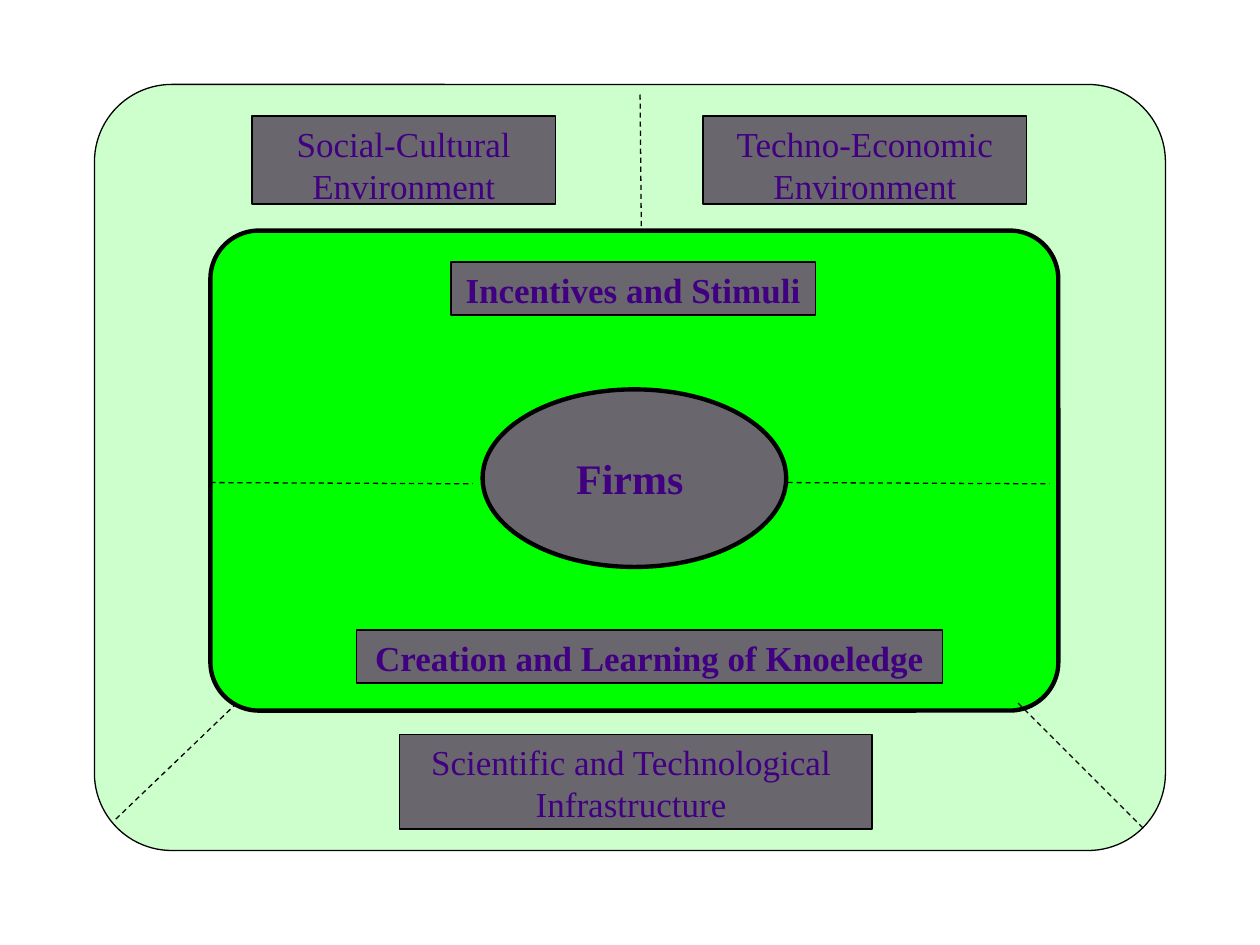
import pptx
import pptx.util
import pptx.dml.color
import pptx.enum.dml
import pptx.enum.shapes
import pptx.enum.text
import pptx.oxml
from dataclasses import dataclass

Inches, Pt = pptx.util.Inches, pptx.util.Pt
RGB = pptx.dml.color.RGBColor.from_string
SHAPE = pptx.enum.shapes.MSO_SHAPE
ANCHOR = pptx.enum.text.MSO_ANCHOR


@dataclass(frozen=True)
class Theme:
    font: str = "Times New Roman"
    outer: str = "CCFFCC"
    inner: str = "00FF00"
    box: str = "69676D"
    line: str = "000000"
    text: str = "410082"
    label_size: int = 20
    core_size: int = 24
    leading: int = 24
    thin: float = 0.75
    thick: float = 2.5
    corner: float = 0.101
    inset_x: float = 0.1
    inset_y: float = 0.05


class Diagram:
    def __init__(self, slide, theme):
        self.s, self.t = slide, theme

    def shape(self, kind, at, fill, weight):
        sp = self.s.shapes.add_shape(kind, *map(Inches, at))
        sp.shadow.inherit = False
        sp.fill.solid()
        sp.fill.fore_color.rgb = RGB(fill)
        sp.line.color.rgb = RGB(self.t.line)
        sp.line.width = Pt(weight)
        return sp

    def panel(self, at, fill, weight):
        sp = self.shape(SHAPE.ROUNDED_RECTANGLE, at, fill, weight)
        sp.adjustments[0] = self.t.corner

    def caption(self, sp, text, size, bold, anchor, shift=(0, 0)):
        """Centre the text; shift widens the right and top insets."""
        tf = sp.text_frame
        tf.word_wrap = True
        tf.vertical_anchor = anchor
        tf.margin_left = Inches(self.t.inset_x)
        tf.margin_right = Inches(self.t.inset_x + shift[0])
        tf.margin_top = Inches(self.t.inset_y + shift[1])
        tf.margin_bottom = Inches(self.t.inset_y)
        tf.text = text
        for p in tf.paragraphs:
            p.alignment = pptx.enum.text.PP_ALIGN.CENTER
            p.line_spacing = Pt(self.t.leading)
            for r in p.runs:
                r.font.name = self.t.font
                r.font.size = Pt(size)
                r.font.bold = bold
                r.font.color.rgb = RGB(self.t.text)

    def label(self, at, text, bold=False, shift=(0, 0)):
        sp = self.shape(SHAPE.RECTANGLE, at, self.t.box, self.t.thin)
        self.caption(sp, text, self.t.label_size, bold, ANCHOR.TOP, shift)

    def core(self, at, text):
        sp = self.shape(SHAPE.OVAL, at, self.t.box, self.t.thick)
        self.caption(sp, text, self.t.core_size, True, ANCHOR.MIDDLE, (0.07, 0.06))

    def divider(self, *ends):
        cx = self.s.shapes.add_connector(
            pptx.enum.shapes.MSO_CONNECTOR.STRAIGHT, *map(Inches, ends))
        cx.line.color.rgb = RGB(self.t.line)
        cx.line.width = Pt(self.t.thin)
        cx.line.dash_style = pptx.enum.dml.MSO_LINE.DASH
        cx._element.spPr.append(pptx.oxml.parse_xml(
            '<a:effectLst xmlns:a="http://schemas.openxmlformats.org/drawingml/2006/main"/>'))


def main():
    prs = pptx.Presentation()
    prs.slide_width, prs.slide_height = Inches(10), Inches(7.5)
    theme = Theme()
    d = Diagram(prs.slides.add_slide(prs.slide_layouts[6]), theme)

    # Nested environments around the firms
    d.panel((0.75, 0.67, 8.5, 6.08), theme.outer, theme.thin)
    d.panel((1.67, 1.83, 6.73, 3.81), theme.inner, theme.thick)
    d.core((3.83, 3.09, 2.41, 1.41), "Firms")

    # Dashed borders between the sectors
    for x in (1.67, 6.25):
        d.divider(x, 3.83, x + 2.08, 3.84)
    d.divider(1.88, 5.58, 0.92, 6.5)
    d.divider(8.08, 5.58, 9.08, 6.58)
    d.divider(5.08, 0.75, 5.09, 1.81)

    # Outer sector labels
    d.label((2, 0.92, 2.41, 0.7), "Social-Cultural\nEnvironment")
    d.label((5.58, 0.92, 2.57, 0.7), "Techno-Economic\nEnvironment")
    d.label((3.17, 5.83, 3.75, 0.75),
            "Scientific and Technological\nInfrastructure", shift=(0.07, 0))

    # Inner sector labels
    d.label((3.58, 2.08, 2.89, 0.42), "Incentives and Stimuli", bold=True)
    d.label((2.83, 5, 4.65, 0.42), "Creation and Learning of Knoeledge", bold=True)

    prs.save("out.pptx")


if __name__ == "__main__":
    main()
